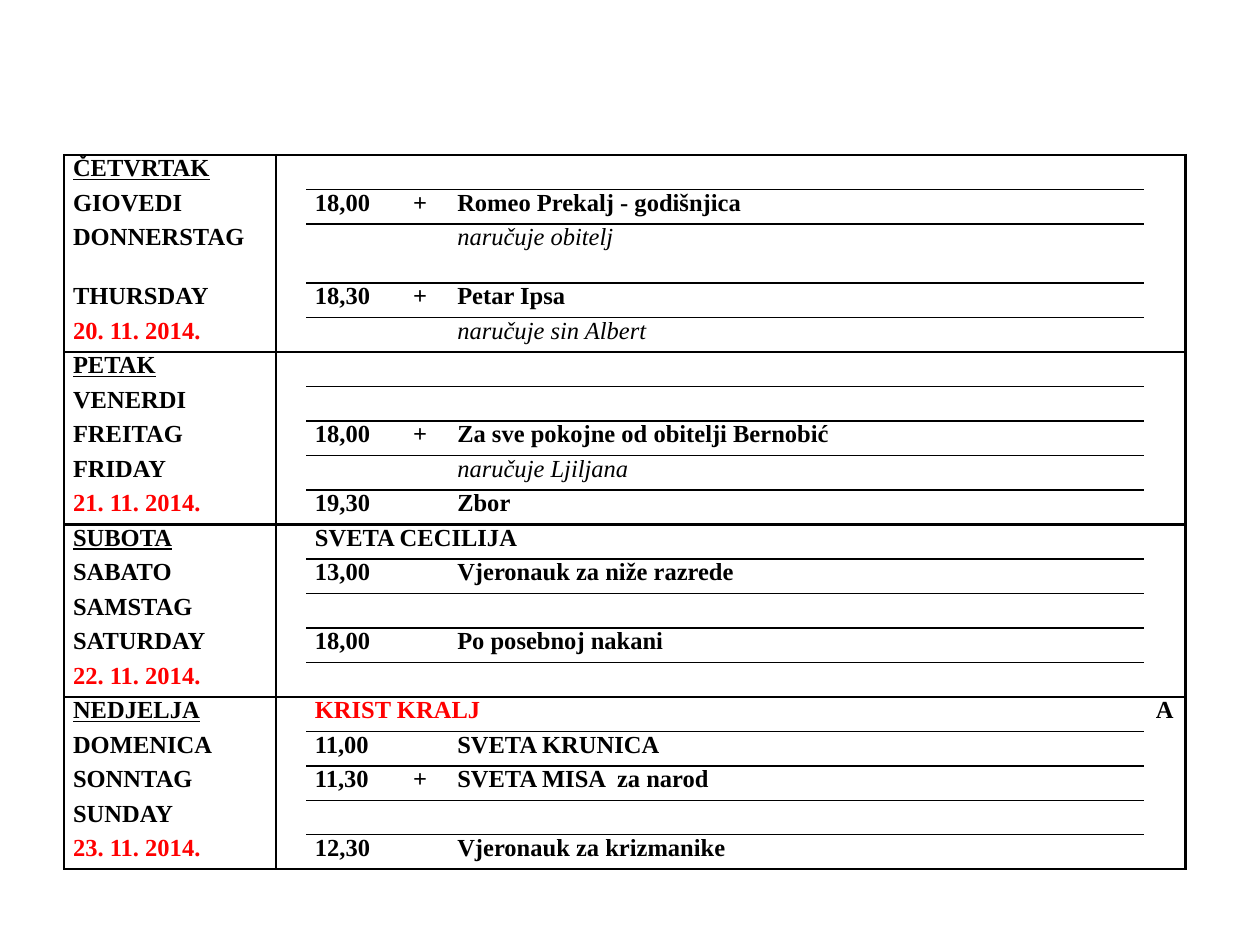
from lxml import etree
from pptx import Presentation
from pptx.dml.color import RGBColor
from pptx.enum import text
from pptx.oxml import ns
from pptx.util import Inches, Pt

BLACK = RGBColor(0, 0, 0)
RED = RGBColor(255, 0, 0)
FONT = "Times New Roman"
FONT_SIZE = 14
THICK, THIN = 1.5, 1
COLUMN_WIDTHS = [1.68, 0.24, 6.65, 0.33]
TABLE_HEIGHT = 5.67
TALL_ROW, TALL_HEIGHT = 2, 0.47
TAB_STOPS = [0.78, 1.13]
DAY_ROWS = 5

DAYS = [
    (["ČETVRTAK", "GIOVEDI", "DONNERSTAG", "THURSDAY\u00a0", "20. 11. 2014."],
     ["", "18,00\t+\tRomeo Prekalj - godišnjica", "\t\tnaručuje obitelj",
      "18,30\t+\tPetar Ipsa", "\t\tnaručuje sin Albert"]),
    (["PETAK", "VENERDI", "FREITAG", "FRIDAY\u00a0", "21. 11. 2014."],
     ["", "", "18,00\t+\tZa sve pokojne od obitelji Bernobić",
      "\t\tnaručuje Ljiljana", "19,30\t\tZbor"]),
    (["SUBOTA", "SABATO", "SAMSTAG", "SATURDAY\u00a0", "22. 11. 2014."],
     ["SVETA CECILIJA", "13,00\t\tVjeronauk za niže razrede", "",
      "18,00\t\tPo posebnoj nakani", ""]),
    (["NEDJELJA", "DOMENICA", "SONNTAG", "SUNDAY", "23. 11. 2014."],
     ["KRIST KRALJ", "11,00\t\tSVETA KRUNICA", "11,30\t+\tSVETA MISA  za narod",
      "", "12,30\t\tVjeronauk za krizmanike"]),
]


def add_tab_stops(paragraph):
    properties = paragraph._p.get_or_add_pPr()
    tabs = etree.Element(ns.qn("a:tabLst"))
    for stop in TAB_STOPS:
        etree.SubElement(tabs, ns.qn("a:tab"), pos=str(Inches(stop)), algn="l")
    properties.insert(0, tabs)


def write_cell(cell, wording, color=BLACK, underline=False, italic=False):
    cell.margin_left = cell.margin_right = Inches(0.07)
    cell.margin_top = cell.margin_bottom = 0
    paragraph = cell.text_frame.paragraphs[0]
    font = paragraph.font
    font.name, font.size = FONT, Pt(FONT_SIZE)
    font.bold, font.italic, font.underline = not italic, italic, underline
    font.color.rgb = color
    if wording:
        paragraph.add_run().text = wording
    else:
        etree.SubElement(paragraph._p, ns.qn("a:endParaRPr"), sz=str(FONT_SIZE * 100))
    if "\t" in wording:
        add_tab_stops(paragraph)
    return paragraph


def set_borders(cell, left=0, right=0, top=0, bottom=0):
    properties = cell._tc.get_or_add_tcPr()
    for side, width in (("L", left), ("R", right), ("T", top), ("B", bottom)):
        line = etree.SubElement(properties, ns.qn(f"a:ln{side}"), w=str(Pt(width)))
        if width:
            fill = etree.SubElement(line, ns.qn("a:solidFill"))
            etree.SubElement(fill, ns.qn("a:srgbClr"), val=str(BLACK))
        else:
            etree.SubElement(line, ns.qn("a:noFill"))
    cell.fill.background()


def frame_row(cells, first, last):
    edges = {"top": THICK if first else 0, "bottom": THICK if last else 0}
    day, gap, event, margin = cells
    set_borders(day, left=THICK, right=THICK, **edges)
    set_borders(gap, left=THICK, **edges)
    set_borders(event, top=edges["top"] or THIN, bottom=edges["bottom"] or THIN)
    set_borders(margin, right=THICK, **edges)


def fill_row(cells, day_name, event, first, last):
    feast = event == "KRIST KRALJ"
    write_cell(cells[0], day_name, RED if last else BLACK, underline=first)
    write_cell(cells[1], "")
    write_cell(cells[2], event, RED if feast else BLACK, italic="naručuje" in event)
    liturgical_year = write_cell(cells[3], "A" if feast else "")
    liturgical_year.alignment = text.PP_ALIGN.CENTER
    frame_row(cells, first, last)


def add_schedule(slide):
    row_count = len(DAYS) * DAY_ROWS
    schedule = slide.shapes.add_table(
        row_count, len(COLUMN_WIDTHS), Inches(0.51), Inches(1.23),
        Inches(sum(COLUMN_WIDTHS)), Inches(TABLE_HEIGHT)).table
    schedule.first_row = schedule.horz_banding = False
    for column, width in zip(schedule.columns, COLUMN_WIDTHS):
        column.width = Inches(width)
    row_height = (TABLE_HEIGHT - TALL_HEIGHT) / (row_count - 1)
    for index, row in enumerate(schedule.rows):
        row.height = Inches(TALL_HEIGHT if index == TALL_ROW else row_height)
        day, line = divmod(index, DAY_ROWS)
        names, events = DAYS[day]
        fill_row(list(row.cells), names[line], events[line],
                 first=line == 0, last=line == DAY_ROWS - 1)


def main():
    presentation = Presentation()
    presentation.slide_width = Inches(10)
    presentation.slide_height = Inches(7.5)
    slide = presentation.slides.add_slide(presentation.slide_layouts[6])
    add_schedule(slide)
    presentation.save("out.pptx")


if __name__ == "__main__":
    main()
